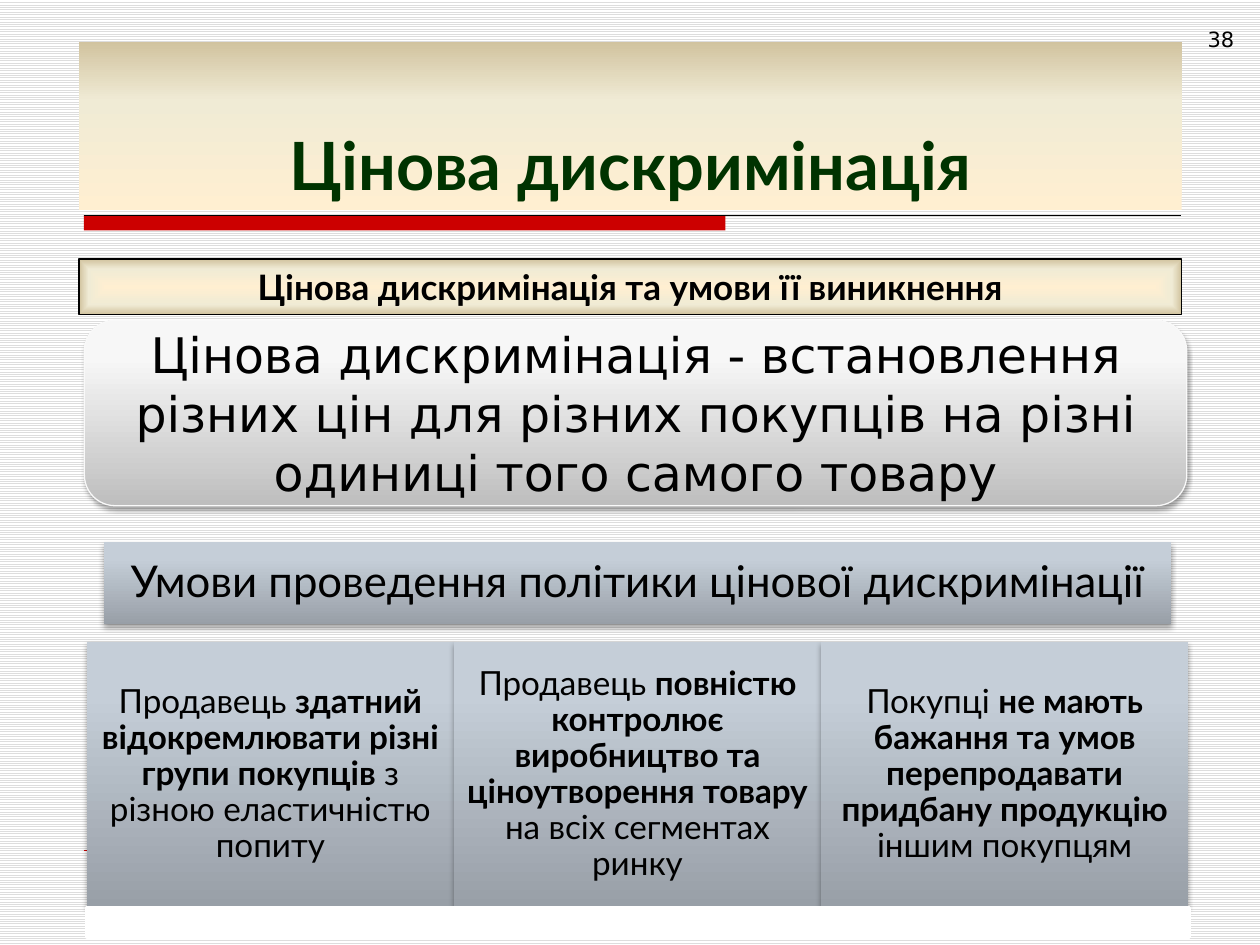
import pptx
import pptx.util
import pptx.dml.color
import pptx.enum.dml
import pptx.enum.shapes
import pptx.enum.text
import pptx.oxml
import pptx.oxml.ns

Pt = pptx.util.Pt
RGB = pptx.dml.color.RGBColor.from_string
SHAPE = pptx.enum.shapes.MSO_SHAPE
ANCHOR = pptx.enum.text.MSO_ANCHOR
qn = pptx.oxml.ns.qn
NS = pptx.oxml.ns.nsdecls("a")

THEME = {
    "black": "000000", "white": "FFFFFF", "stripe": "DDDDDD",
    "red": "CC0000", "green": "003300", "edge": "F9F9F9",
    "sand": [(0, "FFEFD1"), (65, "F0EBD5"), (100, "D1C39F")],
    "silver": [(0, "BEBEBE"), (80, "F7F7F7"), (100, "F8F8F8")],
    "steel": [(0, "989FA7"), (80, "C5CED8"), (100, "C6CFDA")],
    "heading": "Lato", "body": "DejaVu Sans",
    "title": 38, "definition": 28, "banner": 25, "subtitle": 20, "condition": 19, "number": 12,
}
UPWARD = '<a:lin ang="16200000" scaled="0"/>'
CENTRED = '<a:path path="rect"><a:fillToRect l="50000" t="50000" r="50000" b="50000"/></a:path>'


def add_box(box, fill, line=None, width=0.75, kind=SHAPE.RECTANGLE, shade=UPWARD, shadow=False):
    sp = s.shapes.add_shape(kind, *map(Pt, box))
    sp.shadow.inherit = False
    spPr = sp._element.spPr
    if isinstance(fill, str):
        sp.fill.solid()
        sp.fill.fore_color.rgb = RGB(fill)
    else:
        sp.fill.background()
        stops = "".join(
            f'<a:gs pos="{pos * 1000}"><a:srgbClr val="{color}"/></a:gs>' for pos, color in fill)
        grad = f'<a:gradFill {NS} rotWithShape="1"><a:gsLst>{stops}</a:gsLst>{shade}</a:gradFill>'
        spPr.replace(spPr.find(qn("a:noFill")), pptx.oxml.parse_xml(grad))
    if line:
        sp.line.color.rgb = RGB(line)
        sp.line.width = Pt(width)
    else:
        sp.line.fill.background()
    if shadow:
        spPr.find(qn("a:effectLst")).append(pptx.oxml.parse_xml(
            f'<a:outerShdw {NS} blurRad="39370" dist="22860" dir="5400000" rotWithShape="0">'
            '<a:srgbClr val="000000"><a:alpha val="35000"/></a:srgbClr></a:outerShdw>'))
    return sp


def add_text(sp, runs, size, font=THEME["heading"], color=THEME["black"],
             anchor=ANCHOR.MIDDLE, inset=(7.2, 3.6), spacing=1.0):
    tf = sp.text_frame
    dx, dy = map(Pt, inset)
    frame = {"word_wrap": True, "vertical_anchor": anchor, "margin_left": dx,
             "margin_right": dx, "margin_top": dy, "margin_bottom": dy}
    for name, value in frame.items():
        setattr(tf, name, value)
    p = tf.paragraphs[0]
    p.alignment = pptx.enum.text.PP_ALIGN.CENTER
    p.line_spacing = spacing
    for text, bold in runs:
        r = p.add_run()
        r.text = text
        for name, value in {"name": font, "size": Pt(THEME[size]), "bold": bold}.items():
            setattr(r.font, name, value)
        r.font.color.rgb = RGB(color)


prs = pptx.Presentation()
prs.slide_width, prs.slide_height = Pt(720), Pt(540)
s = prs.slides.add_slide(prs.slide_layouts[6])
bg = s.background.fill
bg.patterned()
bg.pattern = pptx.enum.dml.MSO_PATTERN.LIGHT_HORIZONTAL
bg.fore_color.rgb = RGB(THEME["stripe"])
bg.back_color.rgb = RGB(THEME["white"])

add_box((48, 123, 366.5, 8.7), THEME["red"])
for right, y, color, width in [(674.7, 123, "black", 0.75), (672, 486, "red", 0.25)]:
    rule = s.shapes.add_connector(
        pptx.enum.shapes.MSO_CONNECTOR.STRAIGHT, Pt(48), Pt(y), Pt(right), Pt(y))
    rule.line.color.rgb = RGB(THEME[color])
    rule.line.width = Pt(width)
    rule._element.spPr.append(pptx.oxml.parse_xml(f"<a:effectLst {NS}/>"))

number = s.shapes.add_textbox(*map(Pt, (675.3, 11.5, 44.7, 19.5)))
add_text(number, [("38", False)], "number", THEME["body"], anchor=ANCHOR.TOP)

title = add_box((45.2, 24, 630, 96), THEME["sand"])
add_text(title, [("Цінова дискримінація", True)], "title",
         color=THEME["green"], anchor=ANCHOR.BOTTOM)

subtitle = add_box((45.2, 148.2, 630, 31.5), THEME["sand"], THEME["black"], 1, shade=CENTRED)
add_text(subtitle, [("Цінова дискримінація та умови її виникнення", True)], "subtitle",
         anchor=ANCHOR.TOP)

definition = add_box((48.2, 183, 630, 106), THEME["silver"], THEME["edge"],
                     kind=SHAPE.ROUNDED_RECTANGLE, shadow=True)
add_text(definition, [("Цінова дискримінація - встановлення різних цін для різних покупців "
                       "на різні одиниці того самого товару", False)],
         "definition", THEME["body"], inset=(8.6, 8.6))

banner = add_box((59.2, 309.8, 610, 47), THEME["steel"], shadow=True)
add_text(banner, [("Умови проведення політики цінової дискримінації", False)], "banner",
         inset=(7.2, 7.2), spacing=0.9)

conditions = [
    ("Продавець ", "здатний відокремлювати різні групи покупців",
     " з різною еластичністю попиту"),
    ("Продавець ", "повністю контролює виробництво та ціноутворення товару",
     " на всіх сегментах ринку"),
    ("Покупці ", "не мають бажання та умов перепродавати придбану продукцію ",
     "іншим покупцям"),
]
left, column = 49.6, 209.8
for i, parts in enumerate(conditions):
    condition = add_box((left + i * column, 367, column, 151.6), THEME["steel"], shadow=True)
    add_text(condition, zip(parts, (False, True, False)), "condition",
             inset=(5.8, 5.8), spacing=0.9)

add_box((left, 518.6, 630, 16.8), THEME["white"], THEME["white"], 2)

prs.save("out.pptx")
